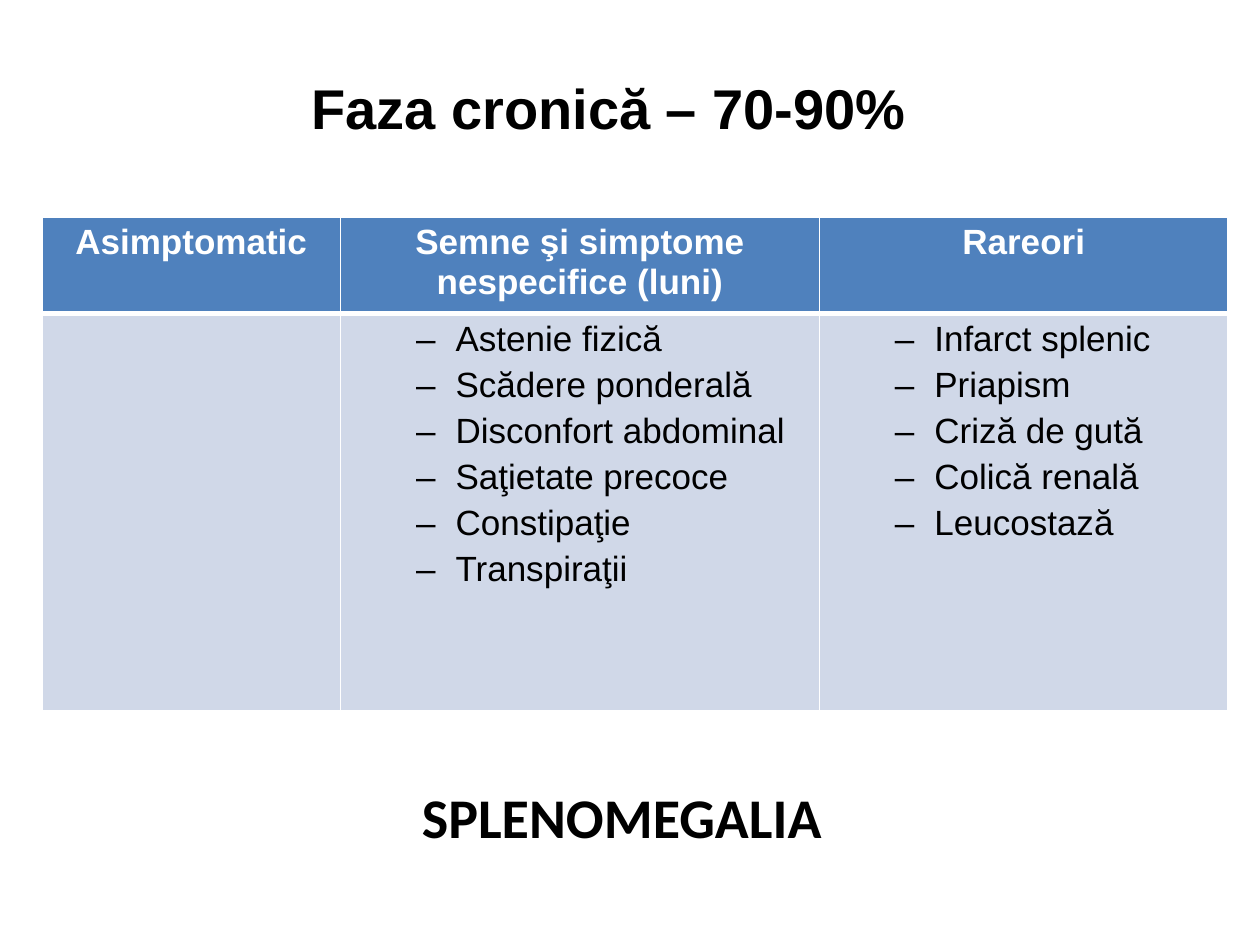
from lxml import etree
from pptx import Presentation
from pptx.dml.color import RGBColor
from pptx.enum import text
from pptx.oxml import ns
from pptx.util import Pt

BLACK = RGBColor(0x00, 0x00, 0x00)
WHITE = RGBColor(0xFF, 0xFF, 0xFF)
BLUE = RGBColor(0x4F, 0x81, 0xBD)
PALE = RGBColor(0xD0, 0xD8, 0xE8)


def add_run(para, words, size, color, bold, face="Arial"):
    run = para.add_run()
    run.text = words
    font = run.font
    font.name, font.size, font.bold = face, Pt(size), bold
    font.color.rgb = color


def add_edge(cell, side, width):
    """Draw one white border; side is L, R, T or B, in that order."""
    props = cell._tc.get_or_add_tcPr()
    line = etree.SubElement(props, ns.qn("a:ln" + side), w=str(Pt(width)))
    fill = etree.SubElement(line, ns.qn("a:solidFill"))
    etree.SubElement(fill, ns.qn("a:srgbClr"), val=str(WHITE))


prs = Presentation()
prs.slide_width, prs.slide_height = Pt(720), Pt(540)
slide = prs.slides.add_slide(prs.slide_layouts[6])

# Title
title = slide.shapes.add_textbox(Pt(24), Pt(16), Pt(648), Pt(90)).text_frame
title.word_wrap = True
title.vertical_anchor = text.MSO_ANCHOR.MIDDLE
para = title.paragraphs[0]
para.alignment = text.PP_ALIGN.CENTER
add_run(para, "Faza cronică – 70-90%", 32, BLACK, True)

# Table: width, heading and signs of each column
cols = [
    (170.6, "Asimptomatic", []),
    (273.6, "Semne şi simptome nespecifice (luni)",
     ["Astenie fizică", "Scădere ponderală", "Disconfort abdominal",
      "Saţietate precoce", "Constipaţie", "Transpiraţii"]),
    (233.6, "Rareori",
     ["Infarct splenic", "Priapism", "Criză de gută", "Colică renală",
      "Leucostază"]),
]
wide = sum(col[0] for col in cols)
table = slide.shapes.add_table(
    2, len(cols), Pt(24), Pt(124), Pt(wide), Pt(276.5)).table
table.rows[0].height, table.rows[1].height = Pt(49.7), Pt(226.8)

for i, (width, head, signs) in enumerate(cols):
    table.columns[i].width = Pt(width)
    top, body = table.cell(0, i), table.cell(1, i)
    for cell, fill, edges in ((top, BLUE, (1, 1, 1, 3)),
                              (body, PALE, (1, 1, 3, 1))):
        for side, edge in zip("LRTB", edges):
            add_edge(cell, side, edge)
        cell.fill.solid()
        cell.fill.fore_color.rgb = fill

    para = top.text_frame.paragraphs[0]
    para.alignment = text.PP_ALIGN.CENTER
    para.space_before = Pt(4)
    add_run(para, head, 20, WHITE, True)

    frame = body.text_frame
    for n, sign in enumerate(signs):
        para = frame.add_paragraph() if n else frame.paragraphs[0]
        para.level = 1
        para.space_before = Pt(4)
        props = para._p.get_or_add_pPr()
        props.set("marL", str(Pt(58.5)))
        props.set("indent", str(-Pt(22.5)))
        etree.SubElement(props, ns.qn("a:buFont"), typeface="Arial")
        etree.SubElement(props, ns.qn("a:buChar"), char="–")
        add_run(para, sign, 20, BLACK, False)

# Closing word
note = slide.shapes.add_textbox(Pt(234), Pt(443.5), Pt(246), Pt(46)).text_frame
note.word_wrap = True
add_run(note.paragraphs[0], "SPLENOMEGALIA", 32, BLACK, True, "Calibri")

prs.save("out.pptx")
